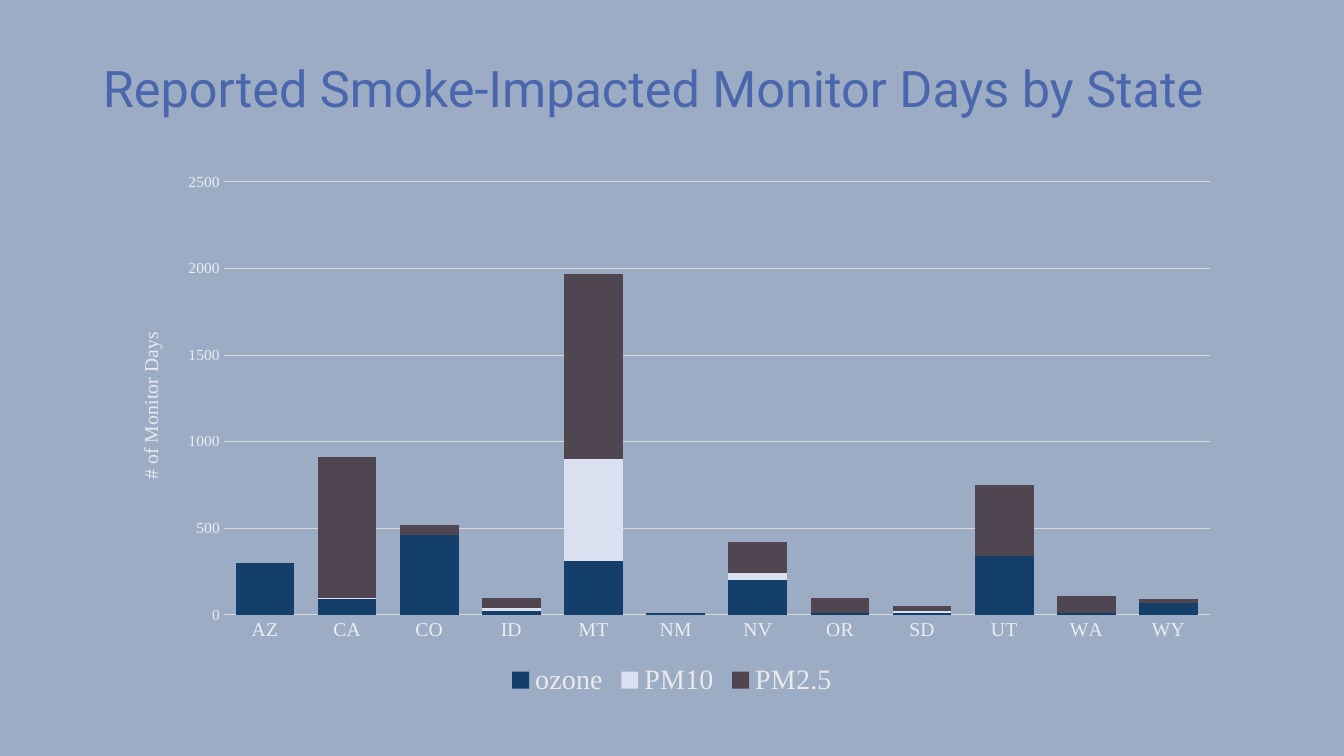
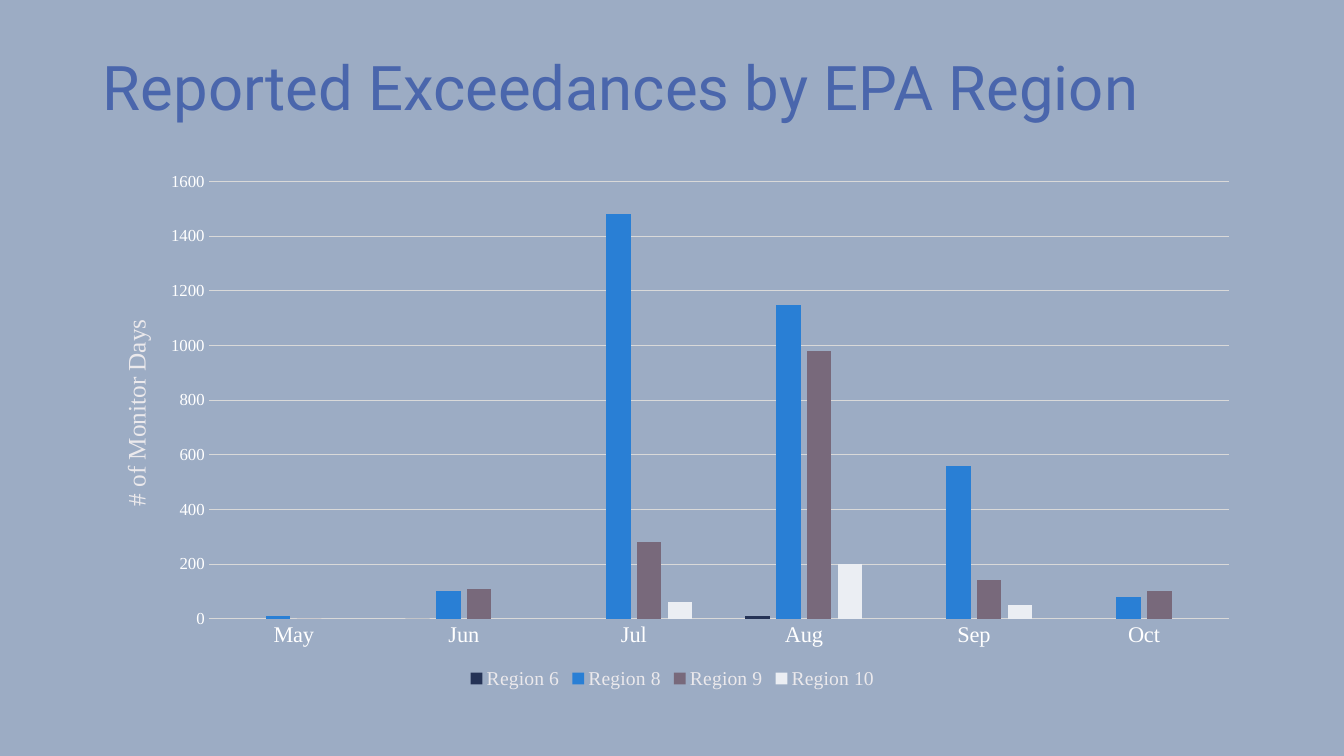
"""Build two slides charting smoke-impacted monitor days by state and by region."""
from dataclasses import dataclass

from lxml import etree
from pptx import Presentation
from pptx.chart.data import CategoryChartData
from pptx.dml.color import RGBColor
from pptx.enum.chart import XL_CHART_TYPE, XL_LEGEND_POSITION, XL_TICK_MARK
from pptx.enum.text import MSO_ANCHOR, MSO_AUTO_SIZE, PP_ALIGN
from pptx.oxml.ns import qn
from pptx.util import Inches, Pt

STACKED = XL_CHART_TYPE.COLUMN_STACKED
CLUSTERED = XL_CHART_TYPE.COLUMN_CLUSTERED
BOTTOM = XL_LEGEND_POSITION.BOTTOM
NO_TICK = XL_TICK_MARK.NONE
MIDDLE = MSO_ANCHOR.MIDDLE
NO_FIT = MSO_AUTO_SIZE.NONE
LEFT = PP_ALIGN.LEFT


@dataclass(frozen=True)
class Theme:
    back: str = "9CACC4"
    title: str = "4A66AC"
    rule: str = "D9D9D9"
    text: str = "EBE9EC"
    pale: str = "EBEEF3"
    white: str = "FFFFFF"
    head_font: str = "Roboto"
    body_font: str = "Times New Roman"
    hair: float = 0.75
    wide_head: int = 36
    head: int = 44
    base: int = 10


theme = Theme()


def style(font, size, color, face=theme.body_font):
    font.size = Pt(size)
    font.name = face
    font.bold = False
    font.color.rgb = RGBColor.from_string(color)


def place(parent, index, inner=False, **shares):
    for old in parent.findall(qn("c:layout")):
        parent.remove(old)
    layout = etree.Element(qn("c:layout"))
    manual = etree.SubElement(layout, qn("c:manualLayout"))
    if inner:
        etree.SubElement(manual, qn("c:layoutTarget")).set("val", "inner")
    for key in ("x", "y"):
        etree.SubElement(manual, qn(f"c:{key}Mode")).set("val", "edge")
    for key, share in shares.items():
        etree.SubElement(manual, qn(f"c:{key}")).set("val", str(share))
    parent.insert(index, layout)


pages = [
    dict(
        title="Reported Smoke-Impacted Monitor Days by State",
        head=theme.wide_head, kind=STACKED, box=(1.11, 1.59, 11.11, 5.37),
        cats="AZ CA CO ID MT NM NV OR SD UT WA WY".split(),
        series=[
            ("ozone", "143F6A", (300, 90, 460, 20, 310, 10, 200, 10, 10, 340, 10, 70)),
            ("PM10", "DAE0EF", (None, 10, None, 20, 590, None, 40, 0, 10, None, 0, None)),
            ("PM2.5", "504652", (0, 810, 60, 60, 1070, 0, 180, 90, 30, 410, 100, 20)),
        ],
        gap=40, lap=100, top=2500, step=500, ink=theme.pale,
        cat=14, val=11, name=14, key=20,
        plot=dict(x=0.1, y=0.04, w=0.88, h=0.8), label=dict(x=0.02, y=0.31),
    ),
    dict(
        title="Reported Exceedances by EPA Region",
        head=theme.head, kind=CLUSTERED, box=(0.92, 1.59, 11.5, 5.29),
        cats="May Jun Jul Aug Sep Oct".split(),
        series=[
            ("Region 6", "253356", (None, 0, None, 10, None, None)),
            ("Region 8", "297FD5", (10, 100, 1480, 1150, 560, 80)),
            ("Region 9", "78697B", (0, 110, 280, 980, 140, 100)),
            ("Region 10", "EBEEF3", (None, None, 60, 200, 50, None)),
        ],
        gap=219, lap=-27, top=1600, step=200, ink=theme.white,
        cat=16, val=12, name=18, key=14,
        plot=dict(x=0.1, y=0.04, w=0.88, h=0.82), label=dict(x=0.02, y=0.29),
    ),
]

deck = Presentation()
deck.slide_width = Inches(13.33)
deck.slide_height = Inches(7.5)
fill = deck.slide_master.background.fill
fill.solid()
fill.fore_color.rgb = RGBColor.from_string(theme.back)

base = deck.slide_layouts.get_by_name("Title Only")
head = base.placeholders[0]
head.left, head.top, head.width, head.height = map(Inches, (0.92, 0.4, 11.5, 1))

for page in pages:
    slide = deck.slides.add_slide(base)
    frame = slide.shapes.title.text_frame
    frame.vertical_anchor = MIDDLE
    frame.auto_size = NO_FIT
    para = frame.paragraphs[0]
    para.alignment = LEFT
    para.line_spacing = 0.9
    run = para.add_run()
    run.text = page["title"]
    style(run.font, page["head"], theme.title, theme.head_font)

    data = CategoryChartData()
    data.categories = page["cats"]
    for name, _, values in page["series"]:
        data.add_series(name, values)
    box = map(Inches, page["box"])
    chart = slide.shapes.add_chart(page["kind"], *box, data).chart
    style(chart.font, theme.base, theme.text)
    chart.has_title = False

    plot = chart.plots[0]
    plot.gap_width = page["gap"]
    plot.overlap = page["lap"]
    plot.vary_by_categories = False
    for bar, (_, color, _) in zip(plot.series, page["series"]):
        bar.invert_if_negative = False
        bar.format.fill.solid()
        bar.format.fill.fore_color.rgb = RGBColor.from_string(color)

    cat, val = chart.category_axis, chart.value_axis
    for axis, size in ((cat, page["cat"]), (val, page["val"])):
        axis.major_tick_mark = axis.minor_tick_mark = NO_TICK
        style(axis.tick_labels.font, size, page["ink"])
    val.has_major_gridlines = True
    for line in (cat.format.line, val.major_gridlines.format.line):
        line.width = Pt(theme.hair)
        line.color.rgb = RGBColor.from_string(theme.rule)
    val.format.line.fill.background()
    val.minimum_scale = 0
    val.maximum_scale = page["top"]
    val.major_unit = page["step"]

    label = val.axis_title
    run = label.text_frame.paragraphs[0].add_run()
    run.text = "# of Monitor Days"
    style(run.font, page["name"], theme.text)
    node = val._element.find(qn("c:title"))
    turn = node.find(".//" + qn("a:bodyPr"))
    turn.set("rot", "-5400000")
    turn.set("vert", "horz")
    place(node, 1, **page["label"])
    area = chart._chartSpace.find(".//" + qn("c:plotArea"))
    place(area, 0, inner=True, **page["plot"])

    chart.has_legend = True
    chart.legend.position = BOTTOM
    chart.legend.include_in_layout = False
    style(chart.legend.font, page["key"], theme.text)

deck.save("out.pptx")
